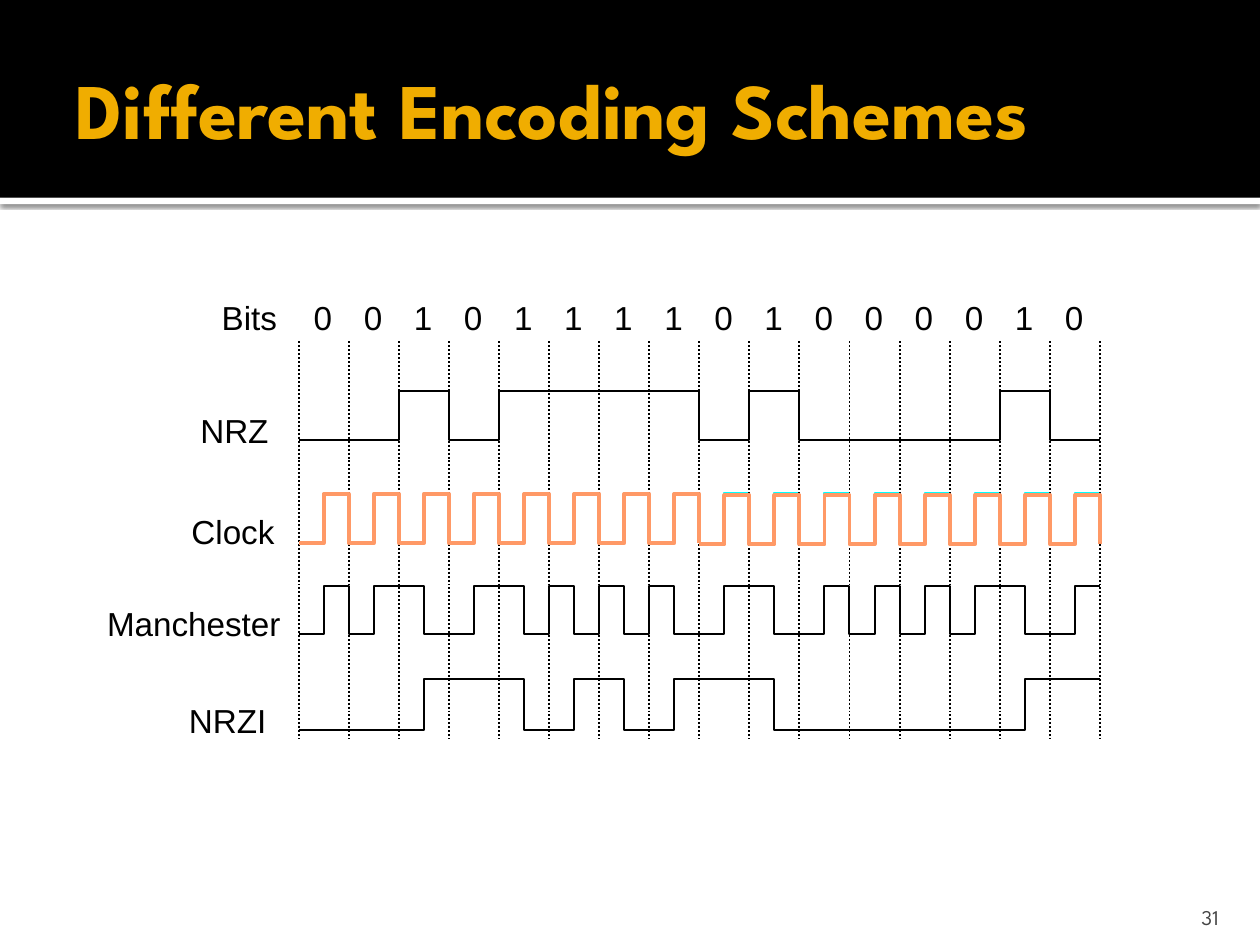
from lxml import etree
from pptx import Presentation
from pptx.dml.color import RGBColor
from pptx.enum.dml import MSO_LINE
from pptx.enum.shapes import MSO_CONNECTOR, MSO_SHAPE
from pptx.enum.text import MSO_ANCHOR, PP_ALIGN
from pptx.oxml import parse_xml
from pptx.oxml.ns import nsdecls, qn
from pptx.util import Inches, Pt

COLORS = {
    "black": "000000", "white": "FFFFFF", "gold": "F0AD00",
    "cyan": "00FFFF", "orange": "FF9966", "gray": "454545",
}
BITS = "0010111101000010"
STRIP_SHADOW = (
    f'<a:effectLst {nsdecls("a")}><a:outerShdw blurRad="31750" dist="10160" '
    'dir="5400000" algn="tl" rotWithShape="0"><a:srgbClr val="000000">'
    '<a:alpha val="60000"/></a:srgbClr></a:outerShdw></a:effectLst>'
)


def rgb(name):
    return RGBColor.from_string(COLORS[name])


def add_text(s, text, box, size, color, font="Arial", bold=False, wrap=False,
             margins=(0, 0, 0, 0), anchor=MSO_ANCHOR.TOP, align=PP_ALIGN.LEFT):
    tf = s.shapes.add_textbox(*map(Inches, box)).text_frame
    tf.word_wrap = wrap
    tf.vertical_anchor = anchor
    tf.margin_left, tf.margin_top, tf.margin_right, tf.margin_bottom = map(Inches, margins)
    p = tf.paragraphs[0]
    p.text = text
    p.alignment = align
    p.font.name, p.font.size, p.font.bold = font, Pt(size), bold
    p.font.color.rgb = rgb(color)


def add_band(s, box, color):
    sp = s.shapes.add_shape(MSO_SHAPE.RECTANGLE, *map(Inches, box))
    sp.shadow.inherit = False
    sp.fill.solid()
    sp.fill.fore_color.rgb = rgb(color)
    sp.line.fill.background()
    return sp


def add_header(s, x, y, w, h):
    strip = add_band(s, (x, y + h, w, 0.05), "white")
    props = strip._element.spPr
    props.remove(props.find(qn("a:effectLst")))
    props.append(parse_xml(STRIP_SHADOW))
    add_band(s, (x, y, w, h), "black")
    add_text(s, "Different Encoding Schemes", (x + 0.5, y + 0.17, w - 1, 1.37), 45,
             "gold", "League Spartan", bold=True, wrap=True,
             margins=(0.1, 0.05, 0.05, 0.05), anchor=MSO_ANCHOR.MIDDLE)


def add_wave(s, x, high, low, step, levels, color="black", width=1.13):
    """Draw a square wave that holds each level for one step."""
    points = []
    for i, level in enumerate(levels):
        y = high if level else low
        points += [(x + i * step, y), (x + (i + 1) * step, y)]
    if levels[-1] and color != "black":
        points.append((points[-1][0], low))  # a clock cycle ends low
    points = [(Inches(px), Inches(py)) for px, py in points]
    builder = s.shapes.build_freeform(*points[0])
    builder.add_line_segments(points[1:], close=False)
    sp = builder.convert_to_shape()
    sp.shadow.inherit = False
    sp.fill.background()
    sp.line.color.rgb = rgb(color)
    sp.line.width = Pt(width)


def nrzi_levels(bits):
    """A one toggles the level halfway through its bit."""
    levels, level = [], 0
    for bit in bits:
        levels.append(level)
        level ^= bit
        levels.append(level)
    return levels


def add_timing_diagram(s, x, y, w, h):
    bits = [int(b) for b in BITS]
    pitch = w / len(bits)
    half = pitch / 2

    # Row labels: text, offset from the grid's left edge, offset from top, width
    for text, dx, dy, width in (("Bits", -0.61, 0, 0.56), ("NRZ", -0.78, 0.9, 0.66),
                                ("Clock", -0.85, 1.7, 0.76),
                                ("Manchester", -1.52, 2.43, 1.45),
                                ("NRZI", -0.87, 3.2, 0.73)):
        add_text(s, text, (x + dx, y + dy, width, 0.36), 19, "black")
    for i, bit in enumerate(BITS):
        add_text(s, bit, (x + 0.12 + i * pitch, y, 0.26, 0.36), 19, "black")

    # Encoded signals
    manchester = [level for bit in bits for level in (bit, 1 - bit)]
    add_wave(s, x, y + 2.29, y + 2.67, half, manchester)
    add_wave(s, x, y + 0.74, y + 1.13, pitch, bits)
    add_wave(s, x, y + 3.03, y + 3.43, half, nrzi_levels(bits))

    # Clock cycles
    for i in range(len(bits)):
        add_wave(s, x + i * pitch, y + 1.55, y + 1.95, half, [0, 1], "cyan")

    # Bit boundaries
    for i in range(len(bits) + 1):
        gx = Inches(x + i * pitch)
        line = s.shapes.add_connector(MSO_CONNECTOR.STRAIGHT, gx, Inches(y + 0.35),
                                      gx, Inches(y + h))
        line.line.color.rgb = rgb("black")
        line.line.width = Pt(1.13)
        line.line.dash_style = MSO_LINE.ROUND_DOT
        etree.SubElement(line._element.spPr, qn("a:effectLst"))

    # Highlighted clock, in two halves
    cycles = len(bits) // 2
    for i in range(2):
        dy = 0.01 * i
        add_wave(s, x + i * cycles * pitch, y + 1.56 + dy, y + 1.95 + dy, half,
                 [0, 1] * cycles, "orange", 2.25)


def add_page_number(s, x, y, w, h):
    add_text(s, "31", (x, y, w, h), 12, "gray", "League Spartan", wrap=True,
             margins=(0.1, 0.05, 0.1, 0), anchor=MSO_ANCHOR.BOTTOM,
             align=PP_ALIGN.RIGHT)


def main():
    prs = Presentation()
    prs.slide_width, prs.slide_height = Inches(10), Inches(7.5)
    s = prs.slides.add_slide(prs.slide_layouts[6])
    add_header(s, 0, 0, 10, 1.57)
    add_timing_diagram(s, 2.37, 2.36, 6.36, 3.5)
    add_page_number(s, 8.97, 7.08, 0.8, 0.3)
    prs.save("out.pptx")


if __name__ == "__main__":
    main()
